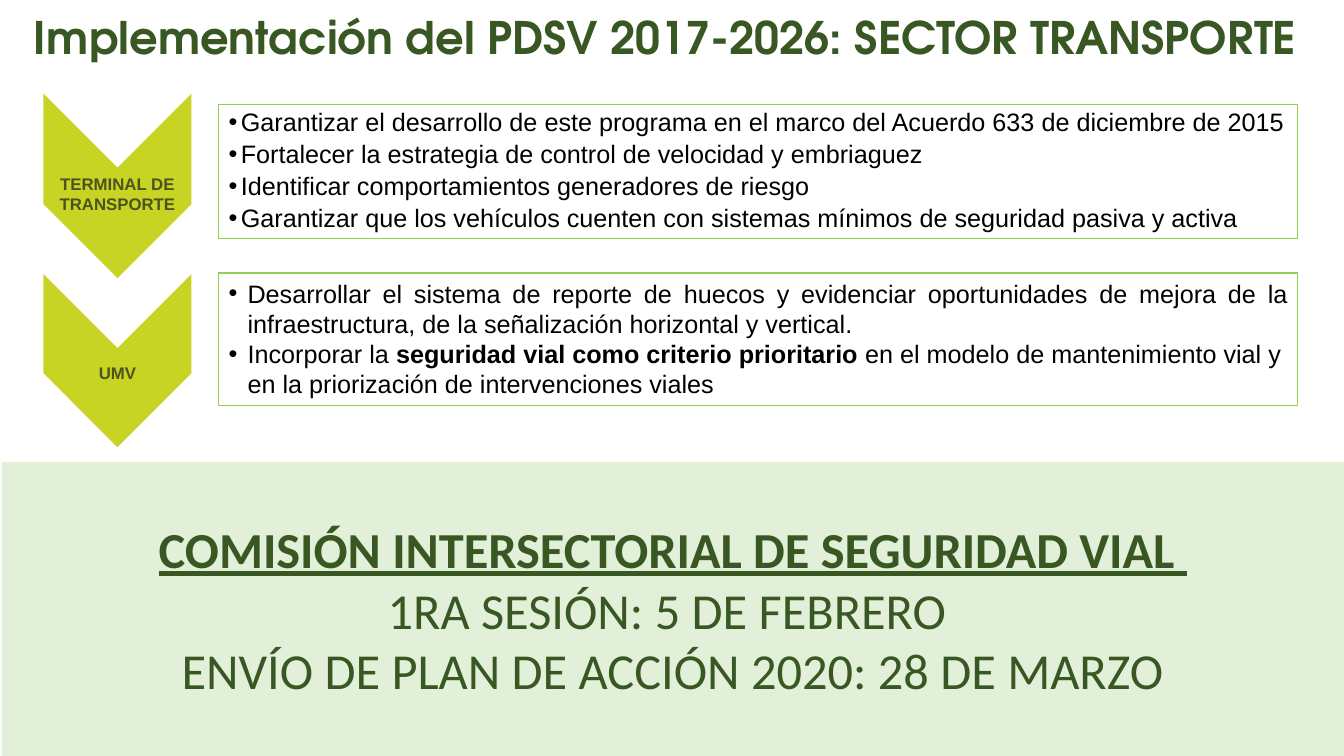
from lxml.etree import SubElement
from pptx import Presentation
from pptx.dml.color import RGBColor
from pptx.enum.shapes import MSO_SHAPE
from pptx.enum.text import MSO_ANCHOR, PP_ALIGN
from pptx.oxml.ns import qn
from pptx.util import Cm, Pt


def color(value):
    return RGBColor.from_string(value)


class SlideBuilder:
    """Draws the styled elements of one slide."""

    GREEN, PALE, LIME, OLIVE, BORDER = "385723", "E2F0D9", "C8D423", "4C531E", "92D050"

    def __init__(self, deck):
        self.shapes = deck.slides.add_slide(deck.slide_layouts[6]).shapes

    def shape(self, kind, left, top, width, height, fill=None, line=None):
        shape = self.shapes.add_shape(kind, Cm(left), Cm(top), Cm(width), Cm(height))
        shape.shadow.inherit = False
        if fill:
            shape.fill.solid()
            shape.fill.fore_color.rgb = color(fill)
        else:
            shape.fill.background()
        if line:
            shape.line.color.rgb = color(line)
            shape.line.width = Pt(0.75)
        else:
            shape.line.fill.background()
        return shape

    def style(self, para, size, font, shade, bold=False, align=PP_ALIGN.CENTER):
        para.alignment = align
        for span in para.runs:
            span.font.size, span.font.name, span.font.bold = Pt(size), font, bold
            span.font.color.rgb = color(shade)

    def text(self, words, left, top, width, height, size, font, shade, inset=None):
        box = self.shapes.add_textbox(Cm(left), Cm(top), Cm(width), Cm(height))
        frame = box.text_frame
        frame.word_wrap = True
        if inset is not None:
            frame.vertical_anchor = MSO_ANCHOR.MIDDLE
            frame.margin_left = frame.margin_right = Cm(inset)
            frame.margin_top = frame.margin_bottom = Cm(inset)
        frame.text = words
        self.style(frame.paragraphs[0], size, font, shade, True)

    def chevron(self, label, top, length, label_middle):
        width, center = 3.73, 2.96
        shape = self.shape(MSO_SHAPE.CHEVRON, center - length / 2,
                           top + (length - width) / 2, length, width, self.LIME)
        shape.rotation = 90
        self.text(label, center - width / 2, label_middle - 0.7, width, 1.4,
                  12, "Arial", self.OLIVE, 0.03)

    def bullets(self, items, top, height, indent, spacing=1.0, after=0):
        box = self.shape(MSO_SHAPE.RECTANGLE, 5.51, top, 27.2, height, line=self.BORDER)
        frame = box.text_frame
        frame.vertical_anchor = MSO_ANCHOR.TOP
        frame.text = "\n".join("".join(parts) for parts, align in items)
        for para, (parts, align) in zip(frame.paragraphs, items):
            para.text = parts[0]
            for part in parts[1:]:
                para.add_run().text = part
            self.style(para, 18, "Arial", "000000", align=align)
            for span in para.runs[1:2]:
                span.font.bold = True
            para.line_spacing, para.space_after = spacing, Pt(after)
            properties = para._p.get_or_add_pPr()
            properties.set("marL", str(Cm(indent)))
            properties.set("indent", str(-Cm(indent)))
            SubElement(properties, qn("a:buFont")).set("typeface", "Arial")
            SubElement(properties, qn("a:buChar")).set("char", "•")

    def banner(self, lines, left, top, width, height):
        box = self.shape(MSO_SHAPE.RECTANGLE, left, top, width, height, self.PALE)
        frame = box.text_frame
        frame.vertical_anchor = MSO_ANCHOR.MIDDLE
        frame.text = "\n".join(lines)
        for para in frame.paragraphs:
            self.style(para, 36, "Calibri", self.GREEN)
        heading = frame.paragraphs[0].runs[0].font
        heading.bold = heading.underline = True


def main():
    deck = Presentation()
    deck.slide_width, deck.slide_height = Cm(33.87), Cm(19.05)
    page = SlideBuilder(deck)
    page.text("Implementación del PDSV 2017-2026: SECTOR TRANSPORTE ",
              0, 0.13, 33.87, 1.62, 32, "TeX Gyre Adventor", page.GREEN)
    page.chevron("TERMINAL DE TRANSPORTE", 2.36, 4.65, 4.88)
    page.banner(["COMISIÓN INTERSECTORIAL DE SEGURIDAD VIAL ",
                 "1RA SESIÓN: 5 DE FEBRERO ",
                 "ENVÍO DE PLAN DE ACCIÓN 2020: 28 DE MARZO"],
                0.04, 11.64, 33.83, 7.41)
    programme = [
        "Garantizar el desarrollo de este programa en el marco del Acuerdo 633 de diciembre de 2015",
        "Fortalecer la estrategia de control de velocidad y embriaguez",
        "Identificar comportamientos generadores de riesgo",
        "Garantizar que los vehículos cuenten con sistemas mínimos de seguridad pasiva y activa",
    ]
    page.bullets([([item], PP_ALIGN.JUSTIFY) for item in programme],
                 2.64, 3.38, 0.31, 0.9, 3.5)
    page.chevron("UMV", 6.91, 4.36, 9.4)
    page.bullets([
        (["Desarrollar el sistema de reporte de huecos y evidenciar oportunidades de mejora "
          "de la infraestructura, de la señalización horizontal y vertical."],
         PP_ALIGN.JUSTIFY),
        (["Incorporar la ", "seguridad vial como criterio prioritario ",
          "en el modelo de mantenimiento vial y en la priorización de intervenciones viales"],
         PP_ALIGN.LEFT),
    ], 6.88, 3.33, 0.48)
    deck.save("out.pptx")


if __name__ == "__main__":
    main()
